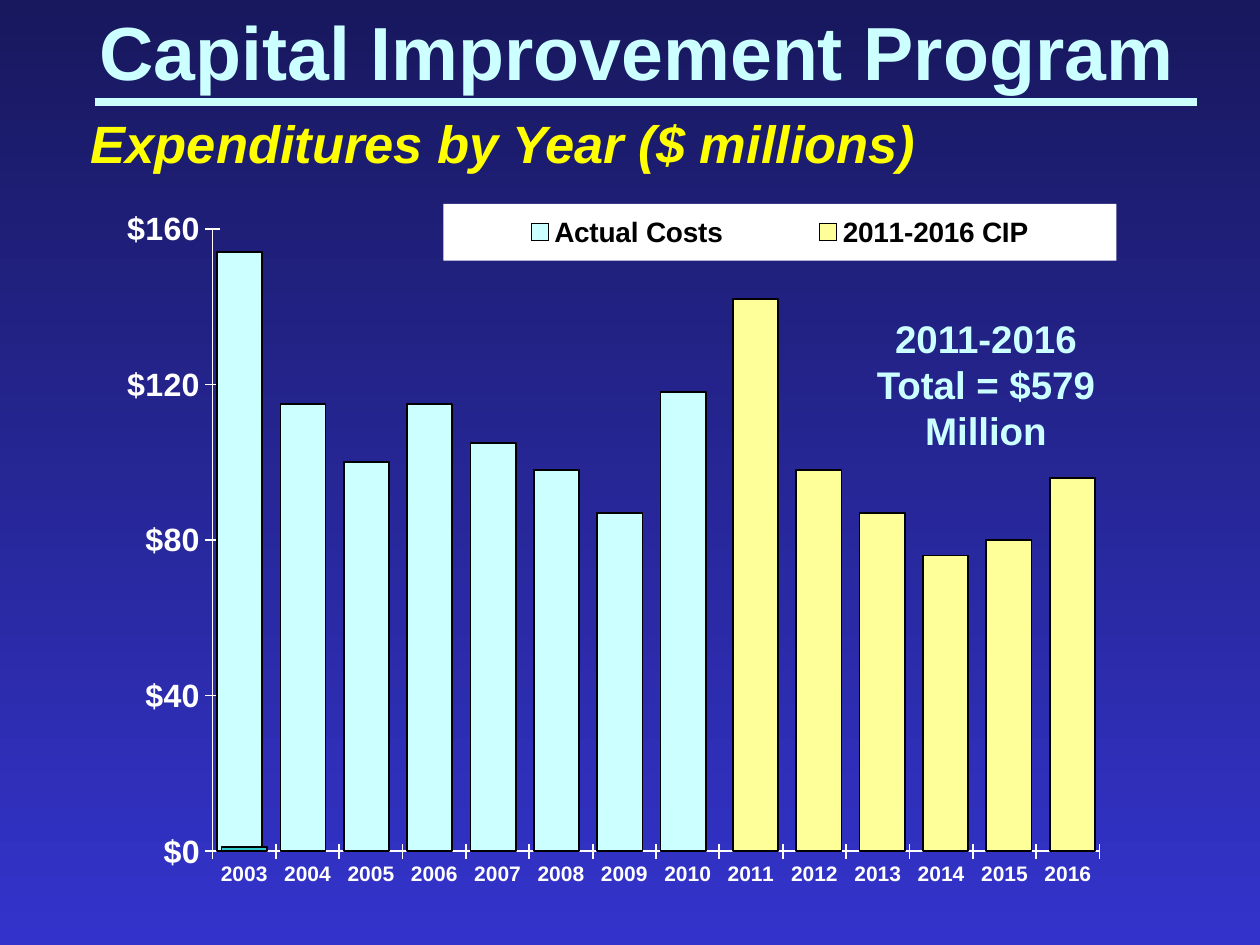
from lxml import etree
from pptx import Presentation
from pptx.chart.data import CategoryChartData
from pptx.dml.color import RGBColor
from pptx.enum.chart import XL_CHART_TYPE, XL_LEGEND_POSITION, XL_TICK_MARK
from pptx.enum.shapes import MSO_CONNECTOR
from pptx.enum.text import MSO_AUTO_SIZE, PP_ALIGN
from pptx.oxml import parse_xml
from pptx.oxml.ns import nsdecls, qn
from pptx.util import Inches, Pt

COLUMNS = XL_CHART_TYPE.COLUMN_CLUSTERED
RIGHT = XL_LEGEND_POSITION.RIGHT
CROSS = XL_TICK_MARK.CROSS
NO_TICK = XL_TICK_MARK.NONE
STRAIGHT = MSO_CONNECTOR.STRAIGHT
FIT_SHAPE = MSO_AUTO_SIZE.SHAPE_TO_FIT_TEXT
LEFT, CENTER = PP_ALIGN.LEFT, PP_ALIGN.CENTER

WIDTH, HEIGHT = Inches(10), Inches(7.5)
FONT = "Arial"
COLORS = {
    "top": "18185E",
    "bottom": "3333CC",
    "ice": "CCFFFF",
    "teal": "33CCCC",
    "cream": "FFFF99",
    "yellow": "FFFF00",
    "white": "FFFFFF",
    "black": "000000",
}
ACTUAL = [154, 115, 100, 115, 105, 98, 87, 118]
PLANNED = [142, 98, 87, 76, 80, 96]
FIRST_YEAR = 2003


def color(name):
    return RGBColor.from_string(COLORS[name])


def style_font(font, size, name, italic=False):
    font.name = FONT
    font.size = Pt(size)
    font.bold = True
    font.italic = italic
    font.color.rgb = color(name)


def style_line(line, name, width):
    line.color.rgb = color(name)
    line.width = Pt(width)


def paint_background(page):
    fill = page.background.fill
    fill.gradient()
    fill.gradient_angle = 270
    for stop, name in zip(fill.gradient_stops, ("top", "bottom")):
        stop.color.rgb = color(name)


def add_text(page, text, place, size, name, align=LEFT, wrap=False, italic=False):
    box = page.shapes.add_textbox(*map(Inches, place))
    frame = box.text_frame
    frame.word_wrap = wrap
    frame.auto_size = FIT_SHAPE
    frame.margin_left = frame.margin_right = Inches(0.09)
    frame.margin_top = frame.margin_bottom = Inches(0.04)
    para = frame.paragraphs[0]
    para.alignment = align
    span = para.add_run()
    span.text = text
    style_font(span.font, size, name, italic)


def add_rule(page, left, right, top):
    rule = page.shapes.add_connector(
        STRAIGHT, Inches(left), Inches(top), Inches(right), Inches(top)
    )
    style_line(rule.line, "ice", 5)
    etree.SubElement(rule.line._get_or_add_ln().getparent(), qn("a:effectLst"))


def manual_layout(left, top, width, height, inner=False):
    target = '<c:layoutTarget val="inner"/>' if inner else ""
    return parse_xml(
        f'<c:layout {nsdecls("c")}><c:manualLayout>{target}'
        '<c:xMode val="edge"/><c:yMode val="edge"/>'
        f'<c:x val="{left}"/><c:y val="{top}"/>'
        f'<c:w val="{width}"/><c:h val="{height}"/>'
        "</c:manualLayout></c:layout>"
    )


def drop_layout(parent):
    for layout in parent.findall(qn("c:layout")):
        parent.remove(layout)


def style_axis(axis, size):
    axis.has_major_gridlines = False
    axis.major_tick_mark = CROSS
    axis.minor_tick_mark = NO_TICK
    style_font(axis.tick_labels.font, size, "white")
    style_line(axis.format.line, "white", 1)


def style_legend(chart):
    chart.has_legend = True
    legend = chart.legend
    legend.position = RIGHT
    legend.include_in_layout = False
    style_font(legend.font, 16, "black")
    element = legend._element
    drop_layout(element)
    position = element.find(qn("c:legendPos"))
    position.addnext(manual_layout(0.3, 0.09, 0.6, 0.07))
    position.addnext(parse_xml(
        f'<c:legendEntry {nsdecls("c")}><c:idx val="1"/><c:delete val="1"/></c:legendEntry>'
    ))
    element.find(qn("c:txPr")).addprevious(parse_xml(
        f'<c:spPr {nsdecls("c", "a")}><a:solidFill><a:srgbClr val="{COLORS["white"]}"/>'
        "</a:solidFill><a:ln><a:noFill/></a:ln></c:spPr>"
    ))


def add_column_chart(page, place):
    count = len(ACTUAL) + len(PLANNED)
    data = CategoryChartData()
    data.categories = [str(FIRST_YEAR + index) for index in range(count)]
    data.add_series("Actual Costs", ACTUAL + [None] * len(PLANNED))
    data.add_series("Series 2", [1] + [None] * (count - 1))
    data.add_series("2011-2016 CIP", [None] * len(ACTUAL) + PLANNED)
    chart = page.shapes.add_chart(COLUMNS, *map(Inches, place), data).chart
    chart.has_title = False
    style_font(chart.font, 16, "black")

    plot = chart.plots[0]
    plot.gap_width = 20
    plot.overlap = 90
    plot.vary_by_categories = False
    for series, name in zip(plot.series, ("ice", "teal", "cream")):
        series.format.fill.solid()
        series.format.fill.fore_color.rgb = color(name)
        style_line(series.format.line, "black", 1)

    style_axis(chart.category_axis, 12)
    values = chart.value_axis
    style_axis(values, 18.4)
    values.minimum_scale, values.maximum_scale = 0, 160
    values.major_unit = 40
    values.tick_labels.number_format = "\\$#,##0"
    values.tick_labels.number_format_is_linked = False

    area = chart._chartSpace.chart.plotArea
    drop_layout(area)
    area.insert(0, manual_layout(0.094, 0.121, 0.791, 0.768, inner=True))
    style_legend(chart)


def main():
    deck = Presentation()
    deck.slide_width, deck.slide_height = WIDTH, HEIGHT
    page = deck.slides.add_slide(deck.slide_layouts[6])
    paint_background(page)
    add_column_chart(page, (0.85, 1.04, 8.9, 6.43))
    add_text(page, "Capital Improvement Program", (0.7, 0, 8.79, 0.81), 43, "ice")
    add_rule(page, 0.75, 9.5, 0.81)
    add_text(page, "Expenditures by Year ($ millions)", (0.63, 0.84, 6.8, 0.6),
             30, "yellow", italic=True)
    add_text(page, "2011-2016 Total = $579 Million", (6.62, 2.46, 2.41, 1.2),
             22, "ice", align=CENTER, wrap=True)
    deck.save("out.pptx")


if __name__ == "__main__":
    main()
